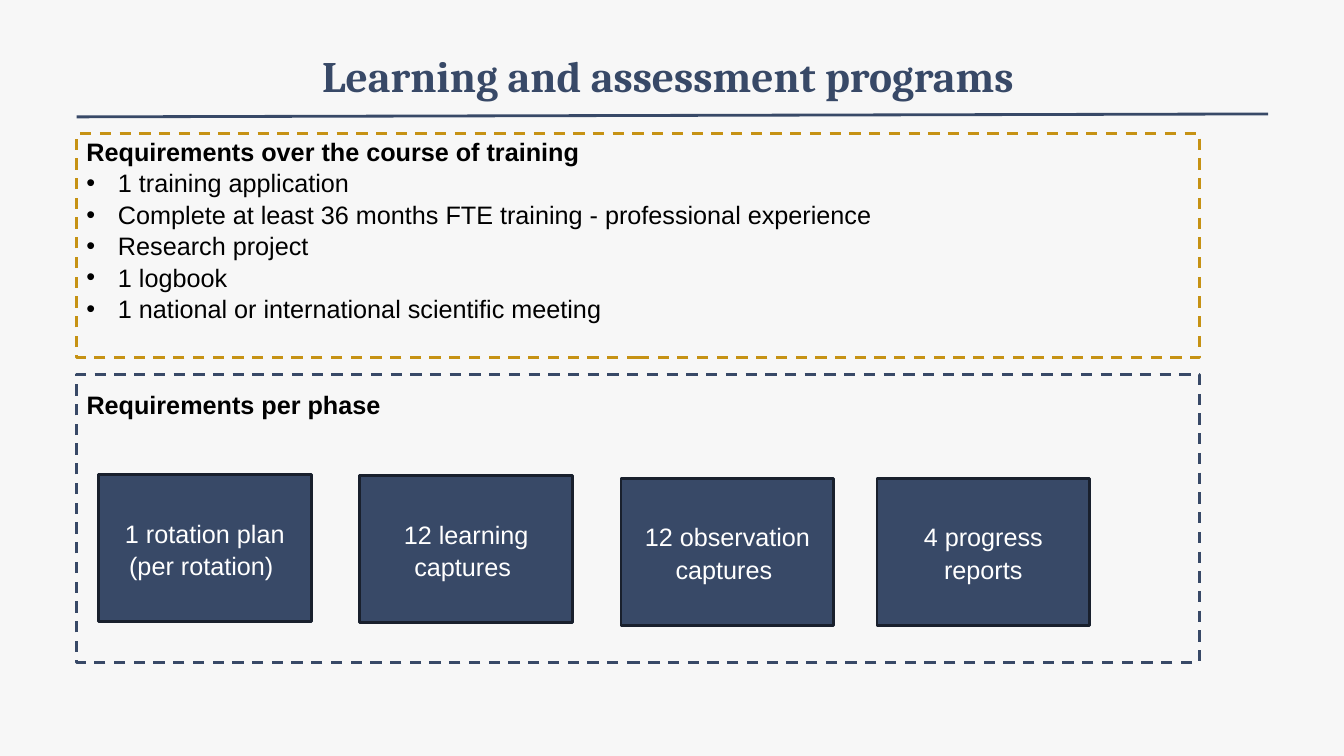
"""Build the slide on learning and assessment programs."""
from dataclasses import dataclass

from lxml import etree
from pptx import Presentation
from pptx.dml.color import RGBColor
from pptx.enum.dml import MSO_LINE
from pptx.enum.shapes import MSO_CONNECTOR, MSO_SHAPE
from pptx.enum.text import MSO_ANCHOR, PP_ALIGN
from pptx.oxml.ns import qn
from pptx.util import Pt

RECT = MSO_SHAPE.RECTANGLE
STRAIGHT = MSO_CONNECTOR.STRAIGHT
DASH = MSO_LINE.DASH
TOP, MIDDLE = MSO_ANCHOR.TOP, MSO_ANCHOR.MIDDLE
LEFT, CENTER = PP_ALIGN.LEFT, PP_ALIGN.CENTER


@dataclass(frozen=True)
class Theme:
    """Colours, fonts and sizes of the slide."""
    background: str = "F7F7F7"
    navy: str = "384967"
    edge: str = "19202D"
    gold: str = "C69214"
    black: str = "000000"
    white: str = "FFFFFF"
    heading_font: str = "Cambria"
    body_font: str = "Arial"
    title_size: int = 31
    body_size: int = 18
    line_width: int = 2
    indent: float = 22.5


class SlideBuilder:
    """Draws styled elements on one slide."""

    def __init__(self, slide, theme):
        self.s = slide
        self.t = theme
        fill = slide.background.fill
        fill.solid()
        fill.fore_color.rgb = RGBColor.from_string(theme.background)

    def run(self, p, text, color, bold=False, size=None, font=None):
        r = p.add_run()
        r.text = text
        r.font.name = font or self.t.body_font
        r.font.size = Pt(size or self.t.body_size)
        r.font.bold = bold
        r.font.color.rgb = RGBColor.from_string(color)

    def stroke(self, line, color):
        line.color.rgb = RGBColor.from_string(color)
        line.width = Pt(self.t.line_width)

    def rect(self, box, color):
        sp = self.s.shapes.add_shape(RECT, *map(Pt, box))
        sp.shadow.inherit = False
        self.stroke(sp.line, color)
        return sp

    def frame(self, box, color):
        sp = self.rect(box, color)
        sp.fill.background()
        sp.line.dash_style = DASH

    def card(self, box, text):
        sp = self.rect(box, self.t.edge)
        sp.fill.solid()
        sp.fill.fore_color.rgb = RGBColor.from_string(self.t.navy)
        tf = sp.text_frame
        tf.word_wrap = True
        tf.vertical_anchor = MIDDLE
        p = tf.paragraphs[0]
        p.alignment = CENTER
        p.line_spacing = 1.07
        self.run(p, text, self.t.white)

    def textbox(self, box, anchor=TOP, align=LEFT):
        tf = self.s.shapes.add_textbox(*map(Pt, box)).text_frame
        tf.word_wrap = True
        tf.vertical_anchor = anchor
        tf.paragraphs[0].alignment = align
        return tf

    def title(self, box, text):
        p = self.textbox(box, MIDDLE, CENTER).paragraphs[0]
        self.run(p, text, self.t.navy, True, self.t.title_size, self.t.heading_font)

    def bullet_list(self, box, heading, items=()):
        tf = self.textbox(box)
        p = tf.paragraphs[0]
        p.line_spacing = 1.04
        self.run(p, heading, self.t.black, bold=True)
        for item in items:
            p = tf.add_paragraph()
            p.line_spacing = 1.04
            pPr = p._p.get_or_add_pPr()
            pPr.set("marL", str(Pt(self.t.indent)))
            pPr.set("indent", str(-Pt(self.t.indent)))
            etree.SubElement(pPr, qn("a:buFont")).set("typeface", self.t.body_font)
            etree.SubElement(pPr, qn("a:buChar")).set("char", "•")
            self.run(p, item, self.t.black)

    def rule(self, x1, y1, x2, y2):
        cx = self.s.shapes.add_connector(STRAIGHT, Pt(x1), Pt(y1), Pt(x2), Pt(y2))
        self.stroke(cx.line, self.t.navy)
        etree.SubElement(cx._element.spPr, qn("a:effectLst"))


def main():
    prs = Presentation()
    prs.slide_width, prs.slide_height = Pt(960), Pt(540)
    theme = Theme()
    s = SlideBuilder(prs.slides.add_slide(prs.slide_layouts[6]), theme)
    left, width = 54.7, 802

    s.title((117, 21, 720, 65.5), "Learning and assessment programs")
    s.rule(left, 83.5, 905.8, 81.4)

    s.frame((left, 95.5, width, 160), theme.gold)
    s.bullet_list((left, 93, 708.5, 138), "Requirements over the course of training", [
        "1 training application",
        "Complete at least 36 months FTE training - professional experience",
        "Research project",
        "1 logbook",
        "1 national or international scientific meeting",
    ])

    s.frame((left, 267.3, width, 206), theme.navy)
    s.bullet_list((left, 273.6, 480, 29), "Requirements per phase")

    cards = [
        (70.3, 339, "1 rotation plan (per rotation) "),
        (257, 339.8, "12 learning captures "),
        (443.6, 341.8, "12 observation captures "),
        (626.4, 341.8, "4 progress reports"),
    ]
    for x, y, text in cards:
        s.card((x, y, 152, 105), text)

    prs.save("out.pptx")


if __name__ == "__main__":
    main()
